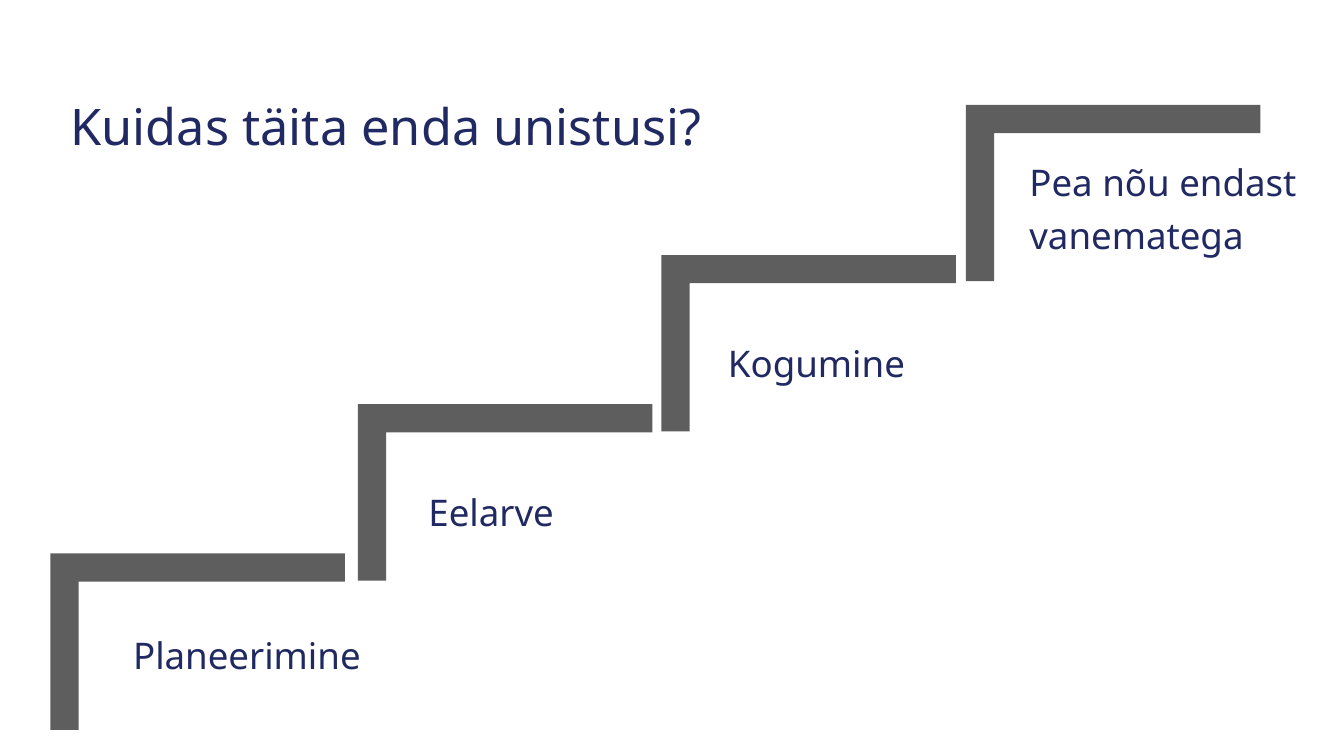
"""Build the slide of four rising steps towards fulfilling a dream."""
from dataclasses import dataclass

from pptx import Presentation
from pptx.dml.color import RGBColor as Rgb
from pptx.enum.text import MSO_ANCHOR as Anchor, PP_ALIGN as Align
from pptx.util import Inches, Pt

TITLE = ("Kuidas täita enda unistusi?", (0.7, 1.01, 11.07, 1.39))
STEPS = [
    ("Planeerimine", (0.5, 5.49), (1.28, 6.12, 3.92, 0.66), 1.2),
    ("Eelarve", (3.55, 4.01), (4.21, 4.52, 3.04, 1.11), 1.0),
    ("Kogumine", (6.56, 2.53), (7.18, 2.98, 2.43, 1.24), 1.0),
    ("Pea nõu endast vanematega", (9.58, 1.04), (10.17, 1.26, 3.16, 1.52), 1.2),
]
WIDE, TALL, THICK = 2.92, 1.75, 0.28


@dataclass(frozen=True)
class Theme:
    """Colours, font and type sizes."""
    ink: Rgb = Rgb.from_string("212963")
    stair: Rgb = Rgb.from_string("5E5E5E")
    font: str = "Noto Sans"
    head: float = 36
    label: float = 26.2


THEME = Theme()


def write(shape, text, size, inset, anchor, gap):
    """Fill a shape with one styled paragraph."""
    frame = shape.text_frame
    frame.text = text
    frame.word_wrap = True
    frame.vertical_anchor = anchor
    frame.margin_left = frame.margin_right = Inches(inset)
    frame.margin_top = frame.margin_bottom = Inches(inset)
    para = frame.paragraphs[0]
    para.alignment = Align.LEFT
    para.line_spacing = gap
    para.space_before = Pt(0)
    para.font.name = THEME.font
    para.font.size = Pt(size)
    para.font.color.rgb = THEME.ink


def stair(slide, left, top):
    """Draw one corner-shaped step."""
    right, foot = left + WIDE, top + TALL
    inner, under = left + THICK, top + THICK
    points = [(right, under), (inner, under), (inner, foot),
              (left, foot), (left, top)]
    pen = slide.shapes.build_freeform(Inches(right), Inches(top))
    pen.add_line_segments([(Inches(x), Inches(y)) for x, y in points])
    shape = pen.convert_to_shape()
    shape.shadow.inherit = False
    shape.fill.solid()
    shape.fill.fore_color.rgb = THEME.stair
    shape.line.fill.background()


def main():
    """Lay out the title, the steps and their labels."""
    deck = Presentation()
    deck.slide_width, deck.slide_height = Inches(13.33), Inches(7.5)
    slide = deck.slides.add_slide(deck.slide_layouts[5])
    text, box = TITLE
    title = slide.shapes.title
    title.left, title.top, title.width, title.height = map(Inches, box)
    write(title, text, THEME.head, 0, Anchor.TOP, 0.9)
    for text, corner, box, gap in STEPS:
        stair(slide, *corner)
        label = slide.shapes.add_textbox(*map(Inches, box))
        write(label, text, THEME.label, 0.04, Anchor.MIDDLE, gap)
    deck.save("out.pptx")


if __name__ == "__main__":
    main()
